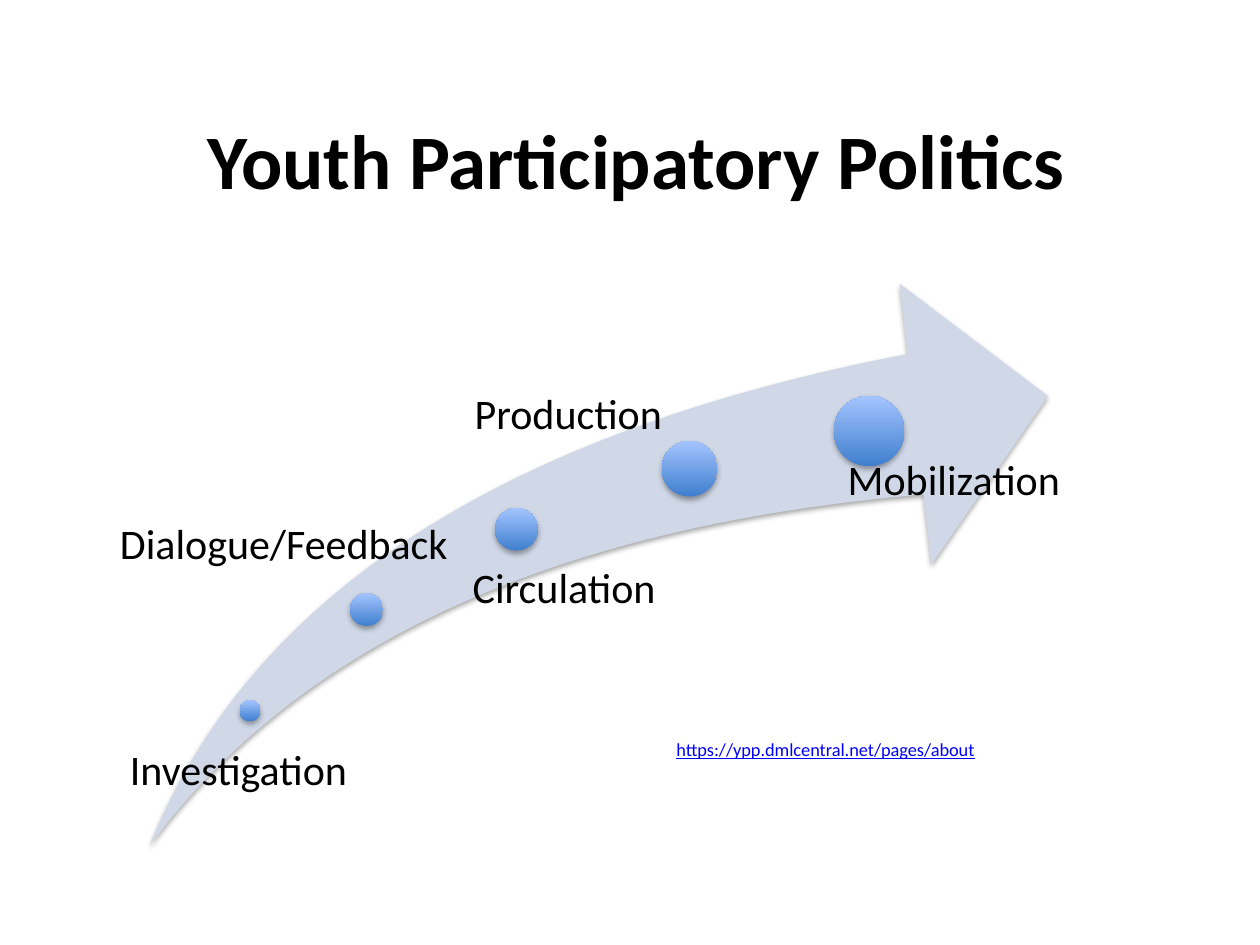
from dataclasses import dataclass

from lxml import etree
from pptx import Presentation
from pptx.dml.color import RGBColor
from pptx.enum.shapes import MSO_SHAPE
from pptx.enum.text import MSO_ANCHOR, MSO_AUTO_SIZE, PP_ALIGN
from pptx.oxml.ns import qn
from pptx.util import Cm, Pt

ARROW, DOT = MSO_SHAPE.SWOOSH_ARROW, MSO_SHAPE.OVAL
LEFT, CENTER, RIGHT = PP_ALIGN.LEFT, PP_ALIGN.CENTER, PP_ALIGN.RIGHT
TOP, MIDDLE = MSO_ANCHOR.TOP, MSO_ANCHOR.MIDDLE
FIT_SHAPE = MSO_AUTO_SIZE.SHAPE_TO_FIT_TEXT
TITLE_ONLY = 5


@dataclass(frozen=True)
class Theme:
    font: str = "Calibri"
    ink: RGBColor = RGBColor(0, 0, 0)
    link: RGBColor = RGBColor(0, 0, 0xFF)
    arrow: RGBColor = RGBColor(0xD0, 0xD8, 0xE8)
    dot_bottom: RGBColor = RGBColor(0x3F, 0x7F, 0xCE)
    dot_top: RGBColor = RGBColor(0xA4, 0xC4, 0xFF)
    title_size: float = 44
    label_size: float = 24
    link_size: float = 10.5


THEME = Theme()

# All places are in centimetres: left, top, width, height.
TITLE = "Youth Participatory Politics"
TITLE_BOX = (1.96, 2.01, 21.74, 2.39)
ARROW_BOX = (3.02, 5.72, 18.11, 11.33)
SOURCE_URL = "https://ypp.dmlcentral.net/pages/about"
SOURCE_BOX = (8.79, 14.76, 11.11, 0.71)

# Stage, dot (left, top, diameter), label box, label indent
STAGES = [
    ("Investigation", (4.83, 14.12, 0.42), (2.39, 15.11, 7.7, 1.45), 0.23),
    ("Dialogue/Feedback", (7.06, 11.96, 0.66), (2.06, 10.54, 9.3, 1.63), 0.36),
    ("Circulation", (9.98, 10.24, 0.86), (9.07, 11.43, 7.44, 1.47), 0.46),
    ("Production", (13.34, 8.89, 1.12), (8.99, 7.92, 8.97, 1.6), 0.58),
    ("Mobilization", (16.81, 7.98, 1.42), (16.33, 9.25, 5.74, 1.63), 0.76),
]


def cm(box):
    return [Cm(length) for length in box]


def write(shape, text, size, color=THEME.ink, align=LEFT, anchor=TOP):
    frame = shape.text_frame
    frame.word_wrap = True
    frame.vertical_anchor = anchor
    frame.text = text
    paragraph = frame.paragraphs[0]
    paragraph.alignment = align
    font = paragraph.font
    font.name, font.size, font.color.rgb = THEME.font, Pt(size), color
    return paragraph


def add_shadowed(slide, kind, box):
    """Add a shape without outline that casts a soft shadow downwards."""
    shape = slide.shapes.add_shape(kind, *cm(box))
    shape.line.fill.background()
    shape.shadow.inherit = False
    effects = shape._element.spPr.find(qn("a:effectLst"))
    shadow = etree.SubElement(effects, qn("a:outerShdw"), blurRad="40000",
                              dist="23000", dir="5400000", rotWithShape="0")
    black = etree.SubElement(shadow, qn("a:srgbClr"), val="000000")
    etree.SubElement(black, qn("a:alpha"), val="35000")
    return shape


def add_title(slide):
    title = slide.shapes.title
    title.left, title.top, title.width, title.height = cm(TITLE_BOX)
    write(title, TITLE, THEME.title_size, align=CENTER, anchor=MIDDLE).font.bold = True


def add_arrow(slide):
    arrow = add_shadowed(slide, ARROW, ARROW_BOX)
    arrow.adjustments[0] = arrow.adjustments[1] = 0.25
    arrow.fill.solid()
    arrow.fill.fore_color.rgb = THEME.arrow


def add_stage(slide, name, dot_place, label_box, indent):
    left, top, diameter = dot_place
    dot = add_shadowed(slide, DOT, (left, top, diameter, diameter))
    dot.fill.gradient()
    dot.fill.gradient_angle = 90
    for stop, color in zip(dot.fill.gradient_stops, (THEME.dot_bottom, THEME.dot_top)):
        stop.color.rgb = color

    label = slide.shapes.add_textbox(*cm(label_box))
    frame = label.text_frame
    frame.margin_left = Cm(indent)
    frame.margin_top = frame.margin_right = frame.margin_bottom = 0
    write(label, name, THEME.label_size).line_spacing = 0.9


def add_source(slide):
    source = slide.shapes.add_textbox(*cm(SOURCE_BOX))
    source.text_frame.auto_size = FIT_SHAPE
    write(source, SOURCE_URL, THEME.link_size, THEME.link, RIGHT).font.underline = True


def main():
    deck = Presentation()
    deck.slide_width, deck.slide_height = Cm(25.4), Cm(19.05)
    slide = deck.slides.add_slide(deck.slide_layouts[TITLE_ONLY])
    add_title(slide)
    add_arrow(slide)
    for stage in STAGES:
        add_stage(slide, *stage)
    add_source(slide)
    deck.save("out.pptx")


if __name__ == "__main__":
    main()
